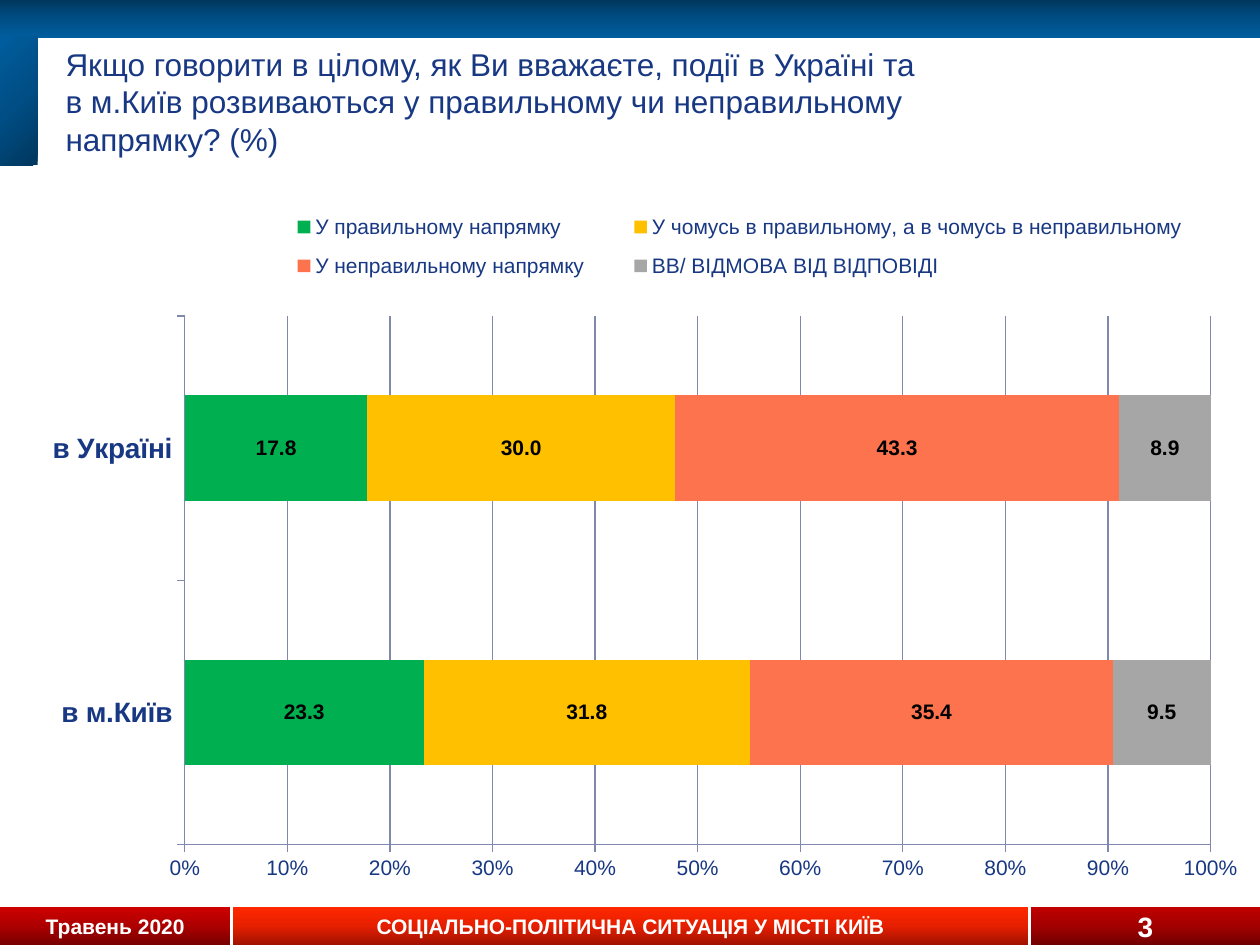
from copy import deepcopy
from dataclasses import dataclass

from lxml import etree
from pptx import Presentation
from pptx.chart.data import CategoryChartData
from pptx.dml.color import RGBColor
from pptx.enum import chart as ch, shapes, text
from pptx.oxml.ns import qn
from pptx.util import Inches, Pt

COLORS = {
    "navy": "183883", "white": "FFFFFF", "black": "000000", "axis": "8089AD",
    "right": "00B050", "mixed": "FFC000", "wrong": "FD734D", "refused": "A6A6A6",
}
GRADIENTS = {
    "blue": ("00375E", "004E85", "005D9E"),
    "dark red": ("770000", "AD0000", "CE0000"),
    "bright red": ("A01200", "E61F00", "FF2800"),
    "deep red": ("720000", "A20000", "C00000"),
}
FONT = "Arial"


@dataclass
class Band:
    left: float
    top: float
    width: float
    height: float
    gradient: str
    angle: int  # counter-clockwise degrees
    caption: str = ""
    size: int = 12


@dataclass
class Answer:
    name: str
    values: tuple[float, float]
    color: str


FOOTER = {"top": 7.2, "height": 0.3, "angle": 90}
BANDS = [
    Band(left=0, width=1.83, gradient="dark red", caption="Травень 2020", **FOOTER),
    Band(left=1.85, width=6.31, gradient="bright red",
         caption="СОЦІАЛЬНО-ПОЛІТИЧНА СИТУАЦІЯ У МІСТІ КИЇВ", **FOOTER),
    Band(left=8.18, width=1.82, gradient="deep red", caption="3", size=16, **FOOTER),
    Band(0, 0, 10, 0.3, "blue", 270),
    Band(0, 0.29, 0.3, 1.02, "blue", 135),
]
QUESTION = ("Якщо говорити в цiлому, як Ви вважаєте, подiї в Українi та в м.Київ "
            "розвиваються у правильному чи неправильному напрямку? (%)")
PLACES = ("в м.Київ", "в Україні")
ANSWERS = [
    Answer("У правильному напрямку", (23.3, 17.8), "right"),
    Answer("У чомусь в правильному, а в чомусь в неправильному", (31.8, 30.0), "mixed"),
    Answer("У неправильному напрямку", (35.4, 43.3), "wrong"),
    Answer("ВВ/ ВІДМОВА ВІД ВІДПОВІДІ", (9.5, 8.9), "refused"),
]


def set_font(font, size: float, color: str, bold: bool = False) -> None:
    formats = {"name": FONT, "size": Pt(size), "bold": bold}
    for attribute, value in formats.items():
        setattr(font, attribute, value)
    font.color.rgb = RGBColor.from_string(COLORS[color])


def draw_band(slide, band: Band) -> None:
    bar = slide.shapes.add_shape(
        shapes.MSO_SHAPE.RECTANGLE, Inches(band.left), Inches(band.top),
        Inches(band.width), Inches(band.height))
    bar.shadow.inherit = False
    bar.line.fill.background()
    bar.fill.gradient()
    bar.fill.gradient_angle = band.angle
    first_stop = bar._element.spPr.find(".//" + qn("a:gs"))
    first_stop.addnext(deepcopy(first_stop))
    for stop, position, color in zip(
            bar.fill.gradient_stops, (0, 0.5, 1), GRADIENTS[band.gradient]):
        stop.position = position
        stop.color.rgb = RGBColor.from_string(color)
    if band.caption:
        frame = bar.text_frame
        frame.word_wrap = True
        frame.vertical_anchor = text.MSO_ANCHOR.MIDDLE
        paragraph = frame.paragraphs[0]
        paragraph.text = band.caption
        paragraph.alignment = text.PP_ALIGN.CENTER
        set_font(paragraph.font, band.size, "white", bold=True)


def draw_question(slide) -> None:
    title = slide.shapes.title
    title.left, title.top = Inches(0.3), Inches(0.3)
    title.width, title.height = Inches(7.16), Inches(1.01)
    frame = title.text_frame
    frame.text = QUESTION
    formats = {"word_wrap": True, "auto_size": text.MSO_AUTO_SIZE.NONE,
               "vertical_anchor": text.MSO_ANCHOR.MIDDLE,
               "margin_left": Inches(0.22)}
    for attribute, value in formats.items():
        setattr(frame, attribute, value)
    paragraph = frame.paragraphs[0]
    paragraph.alignment = text.PP_ALIGN.LEFT
    set_font(paragraph.font, 18, "navy")


def manual_layout(x: float, y: float, w: float, h: float, inner: bool = False):
    """Return a c:layout element placed by fractions of the chart area."""
    layout = etree.Element(qn("c:layout"))
    manual = etree.SubElement(layout, qn("c:manualLayout"))
    values = {"layoutTarget": "inner"} if inner else {}
    values |= {"xMode": "edge", "yMode": "edge", "x": x, "y": y, "w": w, "h": h}
    for tag, value in values.items():
        etree.SubElement(manual, qn(f"c:{tag}")).set("val", str(value))
    return layout


def remove_layout(parent) -> None:
    for layout in parent.findall(qn("c:layout")):
        parent.remove(layout)


def format_axis(axis, size: int, bold: bool = False) -> None:
    axis.major_tick_mark = ch.XL_TICK_MARK.OUTSIDE
    axis.minor_tick_mark = ch.XL_TICK_MARK.NONE
    set_font(axis.tick_labels.font, size, "navy", bold)
    lines = [axis.format.line]
    if axis.has_major_gridlines:
        lines.append(axis.major_gridlines.format.line)
    for line in lines:
        line.width = Pt(0.75)
        line.color.rgb = RGBColor.from_string(COLORS["axis"])


def draw_chart(slide) -> None:
    data = CategoryChartData(number_format="###0.0")
    data.categories = PLACES
    for answer in ANSWERS:
        data.add_series(answer.name, answer.values)
    chart = slide.shapes.add_chart(
        ch.XL_CHART_TYPE.BAR_STACKED_100, Inches(0.17), Inches(1.41),
        Inches(9.75), Inches(5.75), data).chart
    set_font(chart.font, 18, "navy")
    chart.has_title = False

    plot = chart.plots[0]
    plot.gap_width, plot.overlap = 150, 100
    plot.vary_by_categories = False
    for series, answer in zip(plot.series, ANSWERS):
        series.format.fill.solid()
        series.format.fill.fore_color.rgb = RGBColor.from_string(COLORS[answer.color])
        labels = series.data_labels
        formats = {"show_value": True, "number_format": "###0.0",
                   "number_format_is_linked": False,
                   "position": ch.XL_LABEL_POSITION.CENTER}
        for attribute, value in formats.items():
            setattr(labels, attribute, value)
        set_font(labels.font, 12, "black", bold=True)

    chart.value_axis.has_major_gridlines = True
    chart.value_axis.tick_labels.number_format = "0%"
    chart.value_axis.tick_labels.number_format_is_linked = False
    chart.value_axis.maximum_scale = 1
    chart.value_axis.major_unit = 0.1
    format_axis(chart.value_axis, 12)
    format_axis(chart.category_axis, 16, bold=True)

    chart.has_legend = True
    legend = chart.legend
    legend.position = ch.XL_LEGEND_POSITION.RIGHT
    legend.include_in_layout = False
    set_font(legend.font, 12, "navy")

    plot_area = chart._chartSpace.chart.plotArea
    remove_layout(plot_area)
    plot_area.insert(0, manual_layout(0.133, 0.191, 0.835, 0.73, inner=True))
    remove_layout(legend._element)
    legend._element.find(qn("c:legendPos")).addnext(
        manual_layout(0.19, 0.03, 0.79, 0.13))


def main() -> None:
    deck = Presentation()
    deck.slide_width, deck.slide_height = Inches(10), Inches(7.5)
    slide = deck.slides.add_slide(deck.slide_layouts[5])
    for band in BANDS:
        draw_band(slide, band)
    draw_question(slide)
    draw_chart(slide)
    deck.save("out.pptx")


if __name__ == "__main__":
    main()
